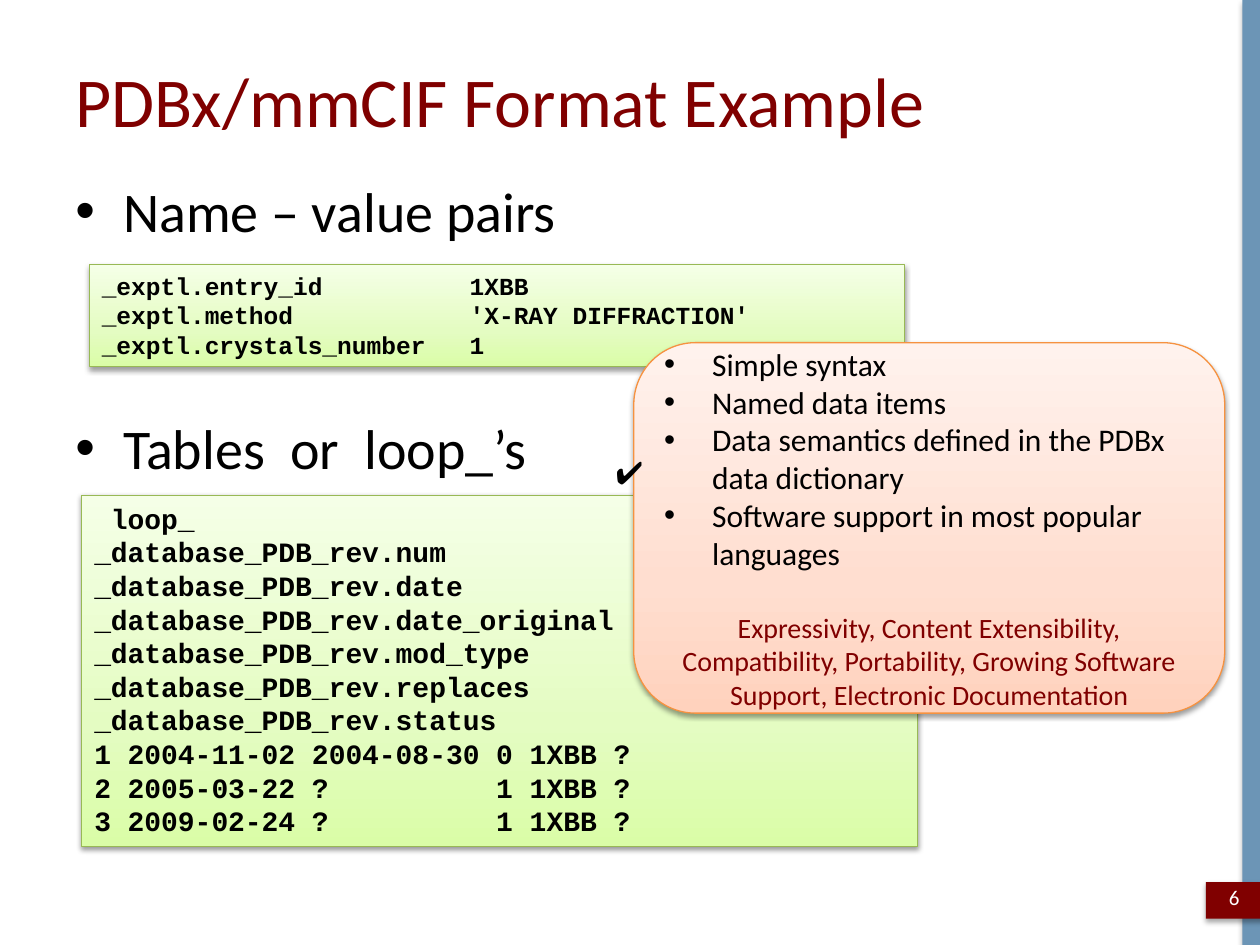
import copy
from dataclasses import dataclass

import pptx
import pptx.dml.color
import pptx.enum.shapes
import pptx.enum.text
import pptx.oxml
import pptx.oxml.ns
import pptx.util

COLUMNS, ROWS = 100, 75
CELL = pptx.util.Inches(0.1)
SANS, MONO = "Calibri", "Courier New"
BLACK, WHITE, MAROON, STEEL = "000000", "FFFFFF", "800000", "6C95B6"
LEFT = pptx.enum.text.PP_ALIGN.LEFT
CENTER = pptx.enum.text.PP_ALIGN.CENTER
TOP = pptx.enum.text.MSO_ANCHOR.TOP
MIDDLE = pptx.enum.text.MSO_ANCHOR.MIDDLE
RECTANGLE = pptx.enum.shapes.MSO_SHAPE.RECTANGLE
ROUNDED = pptx.enum.shapes.MSO_SHAPE.ROUNDED_RECTANGLE
STOP_POSITIONS = (0, 0.35, 1)


@dataclass(frozen=True)
class Area:
    """A place on the slide, in grid columns and rows."""
    left: float
    top: float
    width: float
    height: float

    def lengths(self) -> list[int]:
        return [round(n * CELL) for n in (self.left, self.top, self.width, self.height)]


@dataclass(frozen=True)
class Line:
    text: str
    size: float
    color: str = BLACK
    font: str = SANS
    bold: bool = False
    align: int = LEFT
    bullet: bool = False
    space_before: float = 0


@dataclass(frozen=True)
class Panel:
    """A gradient box; gradient colours run from bottom to top."""
    area: Area
    gradient: tuple[str, str, str]
    outline: str
    lines: list[Line]
    kind: int = RECTANGLE
    anchor: int = TOP


def rgb(color: str) -> pptx.dml.color.RGBColor:
    return pptx.dml.color.RGBColor.from_string(color)


def add_bullet(paragraph) -> None:
    properties = paragraph._p.get_or_add_pPr()
    indent = pptx.util.Inches(0.38)
    properties.set("marL", str(indent))
    properties.set("indent", str(-indent))
    namespace = pptx.oxml.ns.nsdecls("a")
    properties.append(pptx.oxml.parse_xml(f'<a:buFont {namespace} typeface="Arial"/>'))
    properties.append(pptx.oxml.parse_xml(f'<a:buChar {namespace} char="•"/>'))


def write(shape, lines: list[Line], anchor: int = TOP, wrap: bool = True) -> None:
    frame = shape.text_frame
    frame.word_wrap = wrap
    frame.vertical_anchor = anchor
    for index, line in enumerate(lines):
        paragraph = frame.add_paragraph() if index else frame.paragraphs[0]
        paragraph.text = line.text
        paragraph.alignment = line.align
        paragraph.space_before = pptx.util.Pt(line.space_before)
        paragraph.font.name = line.font
        paragraph.font.size = pptx.util.Pt(line.size)
        paragraph.font.bold = line.bold
        paragraph.font.color.rgb = rgb(line.color)
        if line.bullet:
            add_bullet(paragraph)


def add_text(slide, area: Area, lines: list[Line], anchor: int = TOP, wrap: bool = True) -> None:
    write(slide.shapes.add_textbox(*area.lengths()), lines, anchor, wrap)


def add_shadow(shape, opacity: int, distance: float) -> None:
    """Replace the theme shadow by a soft one straight below the shape."""
    shape.shadow.inherit = False
    effects = shape._element.spPr.find(pptx.oxml.ns.qn("a:effectLst"))
    effects.append(pptx.oxml.parse_xml(
        f'<a:outerShdw {pptx.oxml.ns.nsdecls("a")} blurRad="{pptx.util.Pt(3.1)}" '
        f'dist="{pptx.util.Pt(distance)}" dir="5400000" rotWithShape="0">'
        f'<a:srgbClr val="{BLACK}"><a:alpha val="{opacity * 1000}"/></a:srgbClr></a:outerShdw>'))


def add_bar(slide, area: Area, color: str) -> None:
    bar = slide.shapes.add_shape(RECTANGLE, *area.lengths())
    bar.fill.solid()
    bar.fill.fore_color.rgb = rgb(color)
    bar.line.fill.background()
    add_shadow(bar, 35, 1.8)


def fill_gradient(shape, colors: tuple[str, str, str]) -> None:
    shape.fill.gradient()
    shape.fill.gradient_angle = 90
    stop_list = shape._element.spPr.find(".//" + pptx.oxml.ns.qn("a:gsLst"))
    stop_list.append(copy.deepcopy(stop_list[0]))
    for stop, position, color in zip(shape.fill.gradient_stops, STOP_POSITIONS, colors):
        stop.position = position
        stop.color.rgb = rgb(color)


def add_panel(slide, panel: Panel) -> None:
    shape = slide.shapes.add_shape(panel.kind, *panel.area.lengths())
    fill_gradient(shape, panel.gradient)
    shape.line.color.rgb = rgb(panel.outline)
    shape.line.width = pptx.util.Pt(0.75)
    add_shadow(shape, 38, 1.6)
    write(shape, panel.lines, panel.anchor)


def code(texts: list[str], size: float) -> list[Line]:
    return [Line(text, size, font=MONO, bold=True) for text in texts]


GREEN = ("DAFDA7", "E4FCC2", "F5FFE7")
ORANGE = ("FFD2BD", "FFDED0", "FFF2ED")

EXPERIMENT = {"entry_id": "1XBB", "method": "'X-RAY DIFFRACTION'", "crystals_number": "1"}
PAIRS = [f"{'_exptl.' + name:<25}{value}" for name, value in EXPERIMENT.items()]

FIELDS = ["num", "date", "date_original", "mod_type", "replaces", "status"]
REVISIONS = [("1", "2004-11-02", "2004-08-30", "0"),
             ("2", "2005-03-22", "?", "1"),
             ("3", "2009-02-24", "?", "1")]
LOOP = ([" loop_"] + [f"_database_PDB_rev.{field}" for field in FIELDS]
        + [f"{number} {date} {first:<10} {kind} 1XBB ?" for number, date, first, kind in REVISIONS])

ADVANTAGES = ["Simple syntax", "Named data items",
              "Data semantics defined in the PDBx data dictionary",
              "Software support in most popular languages"]
SUMMARY = ("Expressivity, Content Extensibility,\vCompatibility, Portability, "
           "Growing Software Support, Electronic Documentation")

PANELS = [
    Panel(Area(7.1, 21, 64.7, 8.1), GREEN, "98B955", code(PAIRS, 14)),
    Panel(Area(6.5, 39.3, 66.3, 27.9), GREEN, "98B955", code(LOOP, 16)),
    Panel(Area(50.3, 27.2, 46.9, 29.4), ORANGE, "F69240",
          [Line(text, 18, bullet=True) for text in ADVANTAGES]
          + [Line(SUMMARY, 16, MAROON, align=CENTER, space_before=22)],
          ROUNDED, MIDDLE),
]


def main() -> None:
    presentation = pptx.Presentation()
    presentation.slide_width = COLUMNS * CELL
    presentation.slide_height = ROWS * CELL
    slide = presentation.slides.add_slide(presentation.slide_layouts[6])

    add_bar(slide, Area(98.6, 0, 1.4, ROWS), STEEL)
    add_bar(slide, Area(95.7, 70, 4.8, 2.9), MAROON)
    add_text(slide, Area(5, 3, 90, 9.8), [Line("PDBx/mmCIF Format Example", 40, MAROON)], MIDDLE)
    add_text(slide, Area(5, 13.5, 90, 52.3), [
        Line("Name – value pairs", 32, bullet=True),
        Line("Tables  or  loop_’s", 32, bullet=True, space_before=97),
    ])
    add_text(slide, Area(95.7, 69.2, 4.5, 4), [Line("6", 12, WHITE, align=CENTER)], MIDDLE)
    for panel in PANELS:
        add_panel(slide, panel)
    add_text(slide, Area(47.7, 35.5, 4.5, 4), [Line("✔", 18, align=CENTER)], wrap=False)

    presentation.save("out.pptx")


if __name__ == "__main__":
    main()
